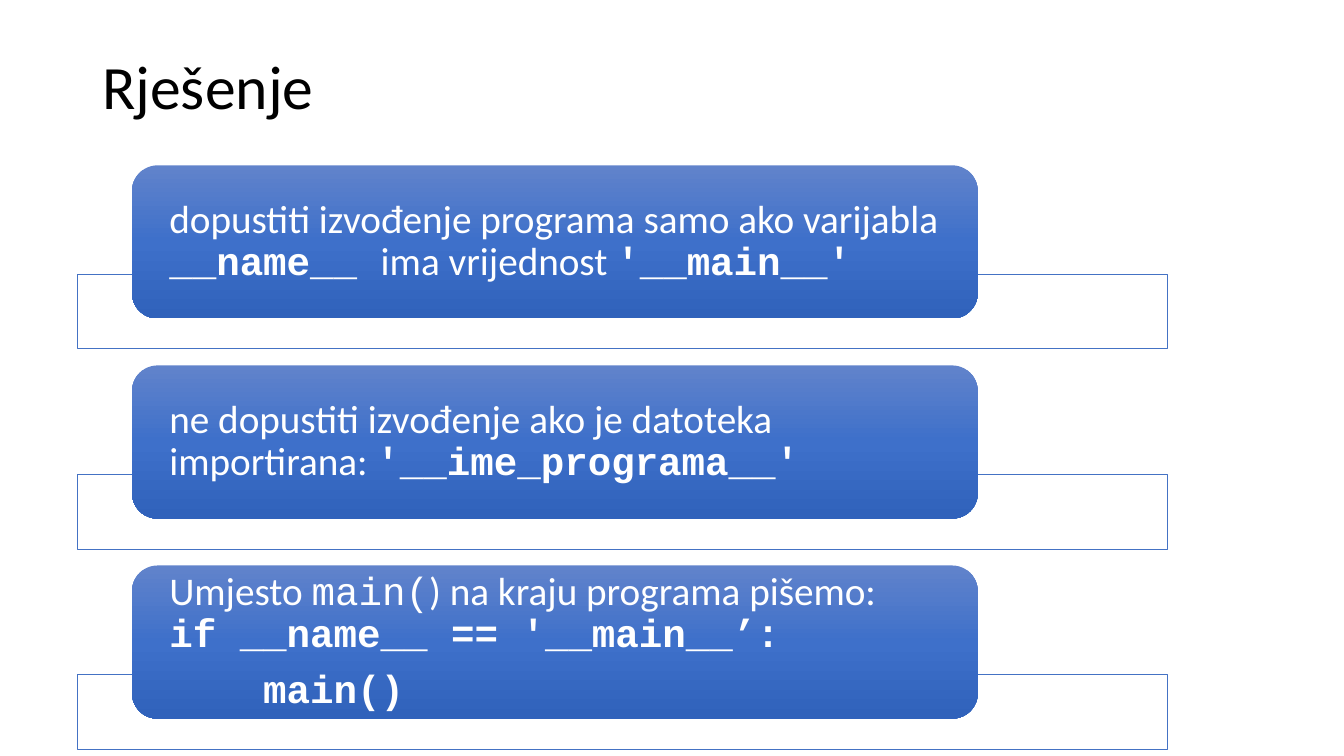
from copy import deepcopy

from lxml import etree
from pptx import Presentation
from pptx.dml.color import RGBColor
from pptx.enum import shapes, text
from pptx.oxml import ns
from pptx.util import Pt

# Content: each box is a list of paragraphs, each paragraph a list of (text, is bold code)
TITLE = "Rješenje"
BODY, CODE, BOLD = ("Calibri", False), ("Courier New", False), ("Courier New", True)
BOXES = [
    [[("dopustiti izvođenje programa samo ako varijabla ", BODY),
      ("__name__ ", BOLD),
      ("ima vrijednost ", BODY),
      ("'__main__'", BOLD)]],
    [[("ne dopustiti izvođenje ako je datoteka importirana: ", BODY),
      ("'__ime_programa__'", BOLD)]],
    [[("Umjesto ", BODY),
      ("main(", CODE),
      (") na kraju programa pišemo: \n", BODY),
      ("if __name__ == '__main__’:", BOLD)],
     [("    main()", BOLD)]],
]

# Colours
BLACK = RGBColor(0x00, 0x00, 0x00)
WHITE = RGBColor(0xFF, 0xFF, 0xFF)
BLUE = RGBColor(0x44, 0x72, 0xC4)
GRADIENT = [(0, RGBColor(0x61, 0x83, 0xCB)),
            (0.5, RGBColor(0x3E, 0x70, 0xCA)),
            (1, RGBColor(0x30, 0x62, 0xBB))]

# Layout in points: left, top, width, height of the first row
FRAME = (55.4, 195.7, 778.3, 53.5)
PILL = (94.3, 118.1, 604.1, 109.4)
LABEL = (100.1, 123.4, 593.3, 98.6)
PITCH = 142.9


def place(box, row=0):
    left, top, width, height = box
    return Pt(left), Pt(top + row * PITCH), Pt(width), Pt(height)


def add_frame(parent, row):
    sp = parent.add_shape(shapes.MSO_SHAPE.RECTANGLE, *place(FRAME, row))
    sp.shadow.inherit = False
    sp.fill.solid()
    sp.fill.fore_color.rgb = WHITE
    color = sp._element.spPr.find(ns.qn("a:solidFill"))[0]
    etree.SubElement(color, ns.qn("a:alpha"), val="90000")
    sp.line.color.rgb = BLUE
    sp.line.width = Pt(0.5)


def add_pill(parent, row):
    sp = parent.add_shape(shapes.MSO_SHAPE.ROUNDED_RECTANGLE, *place(PILL, row))
    sp.shadow.inherit = False
    sp.line.fill.background()
    sp.fill.gradient()
    sp.fill.gradient_angle = 270
    stops = sp._element.spPr.find(".//" + ns.qn("a:gsLst"))
    stops.append(deepcopy(stops[0]))
    for stop, (position, color) in zip(sp.fill.gradient_stops, GRADIENT):
        stop.position = position
        stop.color.rgb = color


def add_text(parent, box, paragraphs, size, color, inset, after=0):
    tf = parent.add_textbox(*box).text_frame
    tf.word_wrap = True
    tf.vertical_anchor = text.MSO_ANCHOR.MIDDLE
    tf.margin_left = tf.margin_right = Pt(inset)
    tf.margin_top = tf.margin_bottom = 0
    for i, runs in enumerate(paragraphs):
        p = tf.add_paragraph() if i else tf.paragraphs[0]
        p.line_spacing = 0.9
        p.space_after = Pt(after)
        p.font.size = Pt(size)
        p.font.color.rgb = color
        styles = {style for _, style in runs}
        if len(styles) == 1:
            p.font.name, p.font.bold = runs[0][1]
        for words, style in runs:
            r = p.add_run()
            r.text = words.rstrip("\n")
            if len(styles) > 1:
                r.font.name, r.font.bold = style
            if words.endswith("\n"):
                p.add_line_break()


prs = Presentation()
prs.slide_width, prs.slide_height = Pt(960), Pt(540)
s = prs.slides.add_slide(prs.slide_layouts[6])

# Title
add_text(s.shapes, place((66, 28.8, 828, 70.5)), [[(TITLE, BODY)]], 44, BLACK, 7.2)

# Three boxes, each over its outlined frame
group = s.shapes.add_group_shape().shapes
for row, paragraphs in enumerate(BOXES):
    add_frame(group, row)
    add_pill(group, row)
    add_text(group, place(LABEL, row), paragraphs, 28, WHITE, 20.9, after=9.8)

prs.save("out.pptx")
